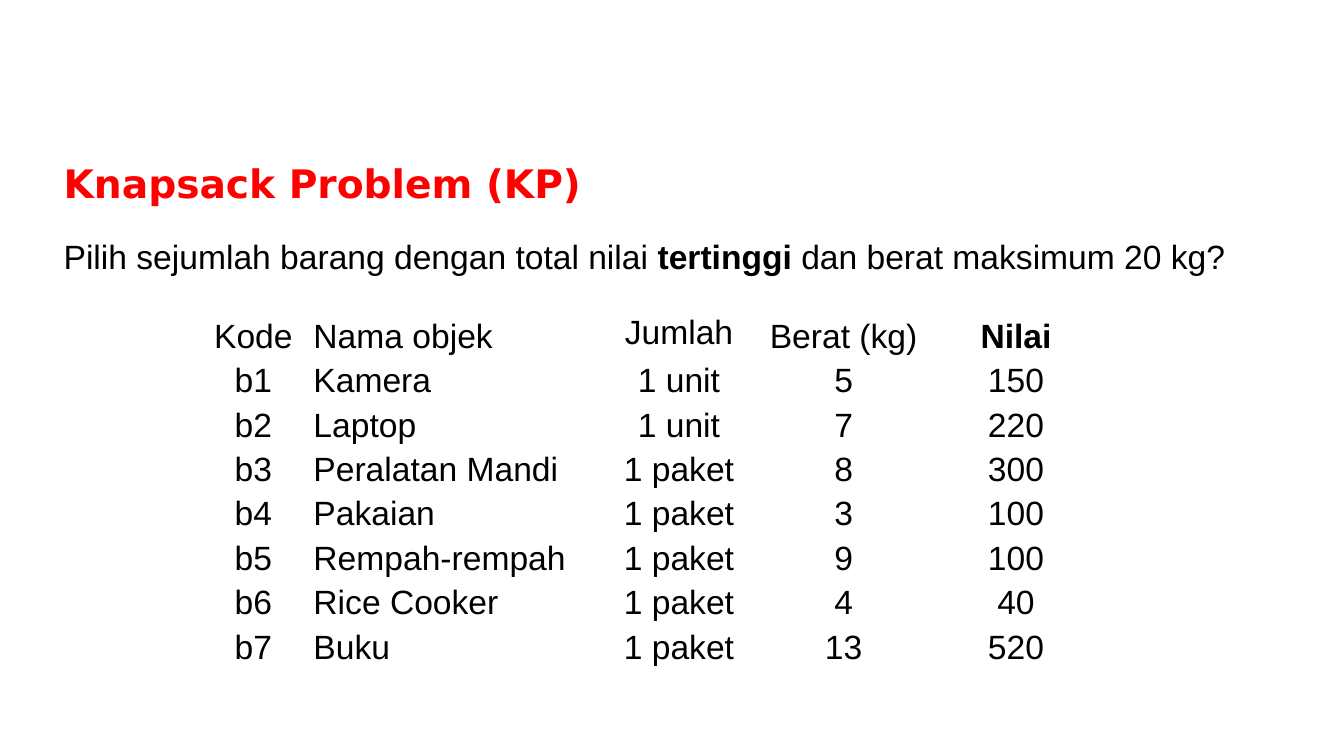
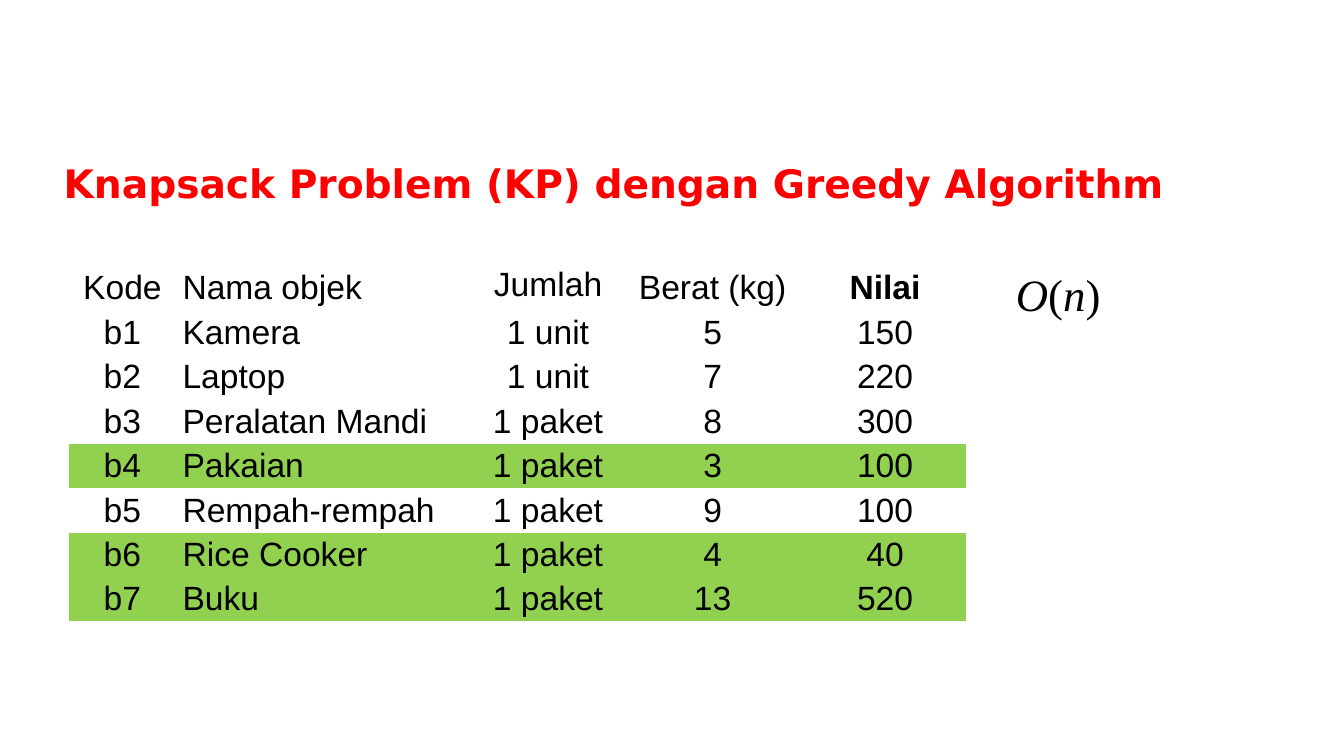
from lxml import etree
from pptx import Presentation, util as u
from pptx.dml.color import RGBColor
from pptx.enum import text
from pptx.oxml.ns import qn

RED = RGBColor(0xFF, 0x00, 0x00)
BLACK = RGBColor(0x00, 0x00, 0x00)
GREEN = RGBColor(0x92, 0xD0, 0x50)
NO_STYLE_NO_GRID = "{2D5ABB26-0587-4C30-8999-92F81FD0307C}"

HEADINGS = ["Kode", "Nama objek", "Jumlah", "Berat (kg)", "Nilai"]
ITEMS = [
    ["b1", "Kamera", "1 unit", "5", "150"],
    ["b2", "Laptop", "1 unit", "7", "220"],
    ["b3", "Peralatan Mandi", "1 paket", "8", "300"],
    ["b4", "Pakaian", "1 paket", "3", "100"],
    ["b5", "Rempah-rempah", "1 paket", "9", "100"],
    ["b6", "Rice Cooker", "1 paket", "4", "40"],
    ["b7", "Buku", "1 paket", "13", "520"],
]


class Deck:
    """Shared style and the slide being built."""
    TITLE_FONT, BODY_FONT, MATH_FONT = "DejaVu Sans", "Arial", "Times New Roman"
    TITLE_SIZE, BODY_SIZE, MATH_SIZE = u.Pt(28), u.Pt(24), u.Pt(32)
    LEFT, WIDTH = u.Cm(1.35), u.Cm(30.84)
    COLUMNS = [u.Cm(w) for w in (2.67, 7.54, 3.7, 4.6, 4.09)]
    ROW_HEIGHT = u.Cm(1.12)

    def __init__(self):
        self.prs = Presentation()
        self.prs.slide_width, self.prs.slide_height = u.Cm(33.87), u.Cm(19.05)
        self.slide = None

    def style(self, run, font, size, color, bold=False, italic=False):
        run.font.name, run.font.size = font, size
        run.font.bold, run.font.italic = bold, italic
        run.font.color.rgb = color

    def place(self, box, left, top, width, height):
        box.left, box.top, box.width, box.height = left, top, width, height
        box.text_frame.word_wrap = True
        box.text_frame.auto_size = text.MSO_AUTO_SIZE.NONE

    def new_slide(self, title, layout):
        self.slide = self.prs.slides.add_slide(self.prs.slide_layouts[layout])
        heading = self.slide.shapes.title
        self.place(heading, self.LEFT, u.Cm(3.89), self.WIDTH, u.Cm(1.45))
        heading.text_frame.text = title
        heading.text_frame.vertical_anchor = text.MSO_ANCHOR.MIDDLE
        line = heading.text_frame.paragraphs[0]
        line.alignment = text.PP_ALIGN.LEFT
        self.style(line.runs[0], self.TITLE_FONT, self.TITLE_SIZE, RED, bold=True)

    def question(self, parts):
        """Body line from (wording, bold) parts, without a bullet."""
        body = self.slide.placeholders[1]
        self.place(body, self.LEFT, u.Cm(5.82), self.WIDTH, u.Cm(1.27))
        line = body.text_frame.paragraphs[0]
        line.space_before = u.Pt(0)
        props = line._p.get_or_add_pPr()
        props.set("marL", "0")
        props.set("indent", "0")
        etree.SubElement(props, qn("a:buNone"))
        for wording, bold in parts:
            run = line.add_run()
            run.text = wording
            self.style(run, self.BODY_FONT, self.BODY_SIZE, BLACK, bold=bold)

    def items_table(self, left, top, chosen=()):
        """Table of items; rows whose code is in chosen are highlighted."""
        rows = [HEADINGS] + ITEMS
        table = self.slide.shapes.add_table(
            len(rows), len(HEADINGS), left, top,
            sum(self.COLUMNS), self.ROW_HEIGHT * len(rows)).table
        table.first_row = table.horz_banding = False
        table._tbl.tblPr.find(qn("a:tableStyleId")).text = NO_STYLE_NO_GRID
        for column, width in zip(table.columns, self.COLUMNS):
            column.width = width
        for r, values in enumerate(rows):
            table.rows[r].height = self.ROW_HEIGHT
            for c, value in enumerate(values):
                self.fill_cell(table.cell(r, c), value, HEADINGS[c], values[0] in chosen)

    def fill_cell(self, cell, value, heading, highlighted):
        cell.margin_left = cell.margin_right = u.Cm(0.18)
        cell.margin_top = cell.margin_bottom = 0
        # The "Jumlah" heading sits at the top of its cell
        cell.vertical_anchor = (text.MSO_ANCHOR.TOP if value == "Jumlah"
                                else text.MSO_ANCHOR.MIDDLE)
        if highlighted:
            cell.fill.solid()
            cell.fill.fore_color.rgb = GREEN
        else:
            cell.fill.background()
        cell.text_frame.text = value
        line = cell.text_frame.paragraphs[0]
        line.alignment = (text.PP_ALIGN.LEFT if heading == "Nama objek"
                          else text.PP_ALIGN.CENTER)
        self.style(line.runs[0], self.BODY_FONT, self.BODY_SIZE, BLACK,
                   bold=value == "Nilai")

    def formula(self, symbols, left, top, width, height):
        """Formula with letters in italics."""
        box = self.slide.shapes.add_textbox(left, top, width, height)
        self.place(box, left, top, width, height)
        for symbol in symbols:
            run = box.text_frame.paragraphs[0].add_run()
            run.text = symbol
            self.style(run, self.MATH_FONT, self.MATH_SIZE, BLACK,
                       italic=symbol.isalpha())


def main():
    deck = Deck()

    # The problem
    deck.new_slide("Knapsack Problem (KP)", layout=1)
    deck.question([("Pilih sejumlah barang dengan total nilai ", False),
                   ("tertinggi ", True),
                   ("dan berat maksimum 20 kg?", False)])
    deck.items_table(u.Cm(5.05), u.Cm(7.92))

    # The greedy solution
    deck.new_slide("Knapsack Problem (KP) dengan Greedy Algorithm", layout=5)
    deck.items_table(u.Cm(1.75), u.Cm(6.7), chosen=("b4", "b6", "b7"))
    deck.formula("O(n)", u.Cm(25.35), u.Cm(6.6), u.Cm(4.06), u.Cm(1.63))

    deck.prs.save("out.pptx")


if __name__ == "__main__":
    main()
